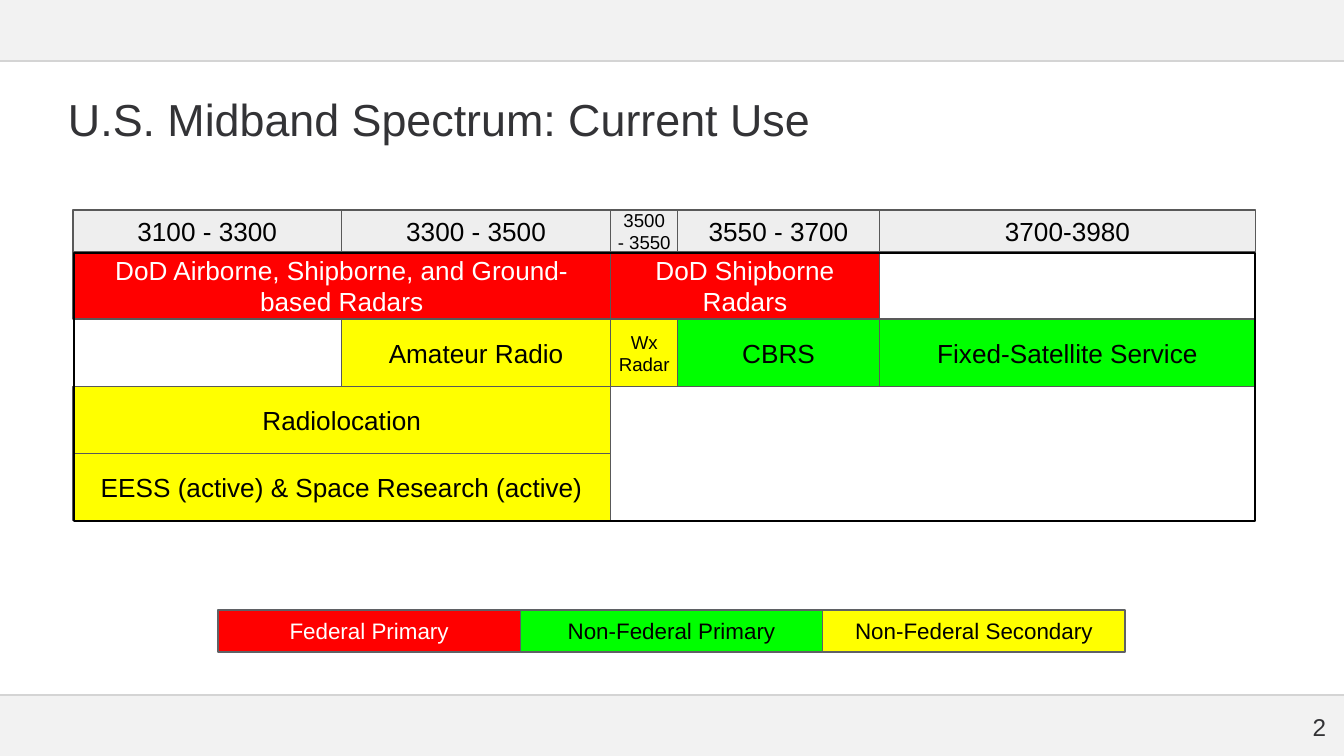
from lxml.etree import SubElement
from pptx import Presentation
from pptx.dml.color import RGBColor
from pptx.enum.shapes import MSO_CONNECTOR, MSO_SHAPE
from pptx.enum.text import MSO_ANCHOR, MSO_AUTO_SIZE, PP_ALIGN
from pptx.oxml.ns import qn
from pptx.util import Pt

PX = 914400 / 134.4
WIDTH, HEIGHT = 1344, 756
INSET = 13
RED, GREEN, YELLOW, GRAY = "FF0000", "00FF00", "FFFF00", "EEEEEE"


def place(left, top, width, height):
    return [round(n * PX) for n in (left, top, width, height)]


def write(box, text, size, color, align, anchor, side=INSET):
    frame = box.text_frame
    frame.word_wrap = True
    frame.auto_size = MSO_AUTO_SIZE.NONE
    frame.vertical_anchor = anchor
    frame.margin_left = frame.margin_right = round(side * PX)
    frame.margin_top = frame.margin_bottom = round(INSET * PX)
    paragraph = frame.paragraphs[0]
    paragraph.alignment = align
    for number, line in enumerate(text.split("\n")):
        if number:
            paragraph.add_line_break()
        run = paragraph.add_run()
        run.text = line
        run.font.name = "Arial"
        run.font.size = Pt(size)
        run.font.color.rgb = RGBColor.from_string(color)


prs = Presentation()
prs.slide_width, prs.slide_height = round(WIDTH * PX), round(HEIGHT * PX)
slide = prs.slides.add_slide(prs.slide_layouts[5])
shapes = slide.shapes

# Top and bottom bands with their rules
for top, height, rule_y in ((0, 61, 61), (695, 61, 695)):
    band = shapes.add_shape(MSO_SHAPE.RECTANGLE, *place(0, top, WIDTH, height))
    band.shadow.inherit = False
    band.fill.solid()
    band.fill.fore_color.rgb = RGBColor.from_string("F2F2F2")
    band.line.fill.background()
    rule = shapes.add_connector(
        MSO_CONNECTOR.STRAIGHT, *place(0, rule_y, WIDTH, rule_y))
    rule.line.color.rgb = RGBColor.from_string("D4D4D4")
    rule.line.width = Pt(1)
    SubElement(rule._element.spPr, qn("a:effectLst"))

# Title and page number
title = shapes.title
title.left, title.top, title.width, title.height = place(55, 73, 1210, 95)
write(title, "U.S. Midband Spectrum: Current Use", 24, "333336",
      PP_ALIGN.LEFT, MSO_ANCHOR.TOP)
title.text_frame.paragraphs[0].line_spacing = 1.1
page_number = shapes.add_textbox(*place(1258, 698, 81, 58))
write(page_number, "2", 13, "333336", PP_ALIGN.RIGHT, MSO_ANCHOR.MIDDLE)

# Spectrum allocations: row, from MHz, to MHz, label, fill (row 0 is the header)
CHART_LEFT, HEADER_TOP, HEADER_HEIGHT = 73, 210, 42
PX_PER_MHZ, ROW_HEIGHT = 1.344, 67.2
ROWS_TOP = HEADER_TOP + HEADER_HEIGHT
allocations = [
    (1, 3100, 3500, "DoD Airborne, Shipborne, and Ground-based Radars", RED),
    (1, 3500, 3700, "DoD Shipborne Radars", RED),
    (2, 3500, 3550, "Wx\nRadar", YELLOW),
    (2, 3300, 3500, "Amateur Radio", YELLOW),
    (3, 3100, 3500, "Radiolocation", YELLOW),
    (4, 3100, 3500, "EESS (active) & Space Research (active)", YELLOW),
    (2, 3550, 3700, "CBRS", GREEN),
    (0, 3100, 3300, "3100 - 3300", GRAY),
    (0, 3300, 3500, "3300 - 3500", GRAY),
    (0, 3500, 3550, "3500\n- 3550", GRAY),
    (0, 3550, 3700, "3550 - 3700", GRAY),
    (0, 3700, 3980, "3700-3980", GRAY),
    (2, 3700, 3980, "Fixed-Satellite Service", GREEN),
]
blocks = []
for row, start, end, label, fill in allocations:
    narrow = end - start == 50
    top = ROWS_TOP + (row - 1) * ROW_HEIGHT if row else HEADER_TOP
    area = place(CHART_LEFT + (start - 3100) * PX_PER_MHZ, top,
                 (end - start) * PX_PER_MHZ,
                 ROW_HEIGHT if row else HEADER_HEIGHT)
    blocks.append((area, label, fill, "595959",
                   10 if narrow else 14, 0 if narrow else INSET))

# Legend entries
LEGEND_LEFT, LEGEND_TOP, LEGEND_WIDTH = 218, 610, 302.4
legend = [("Federal Primary", RED), ("Non-Federal Primary", GREEN),
          ("Non-Federal Secondary", YELLOW)]
for column, (label, fill) in enumerate(legend):
    area = place(LEGEND_LEFT + column * LEGEND_WIDTH, LEGEND_TOP,
                 LEGEND_WIDTH, HEADER_HEIGHT)
    blocks.append((area, label, fill, "5F6165", 12, INSET))

# Draw allocations and legend
for area, label, fill, edge, size, side in blocks:
    block = shapes.add_shape(MSO_SHAPE.RECTANGLE, *area)
    block.shadow.inherit = False
    block.fill.solid()
    block.fill.fore_color.rgb = RGBColor.from_string(fill)
    block.line.color.rgb = RGBColor.from_string(edge)
    block.line.width = Pt(0.75)
    write(block, label, size, "FFFFFF" if fill == RED else "000000",
          PP_ALIGN.CENTER, MSO_ANCHOR.MIDDLE, side)

# Heavy frame around the allocations
frame_outline = shapes.add_shape(
    MSO_SHAPE.RECTANGLE, *place(74, 253, 1181, 268))
frame_outline.shadow.inherit = False
frame_outline.fill.background()
frame_outline.line.color.rgb = RGBColor.from_string("000000")
frame_outline.line.width = Pt(1.5)

prs.save("out.pptx")
